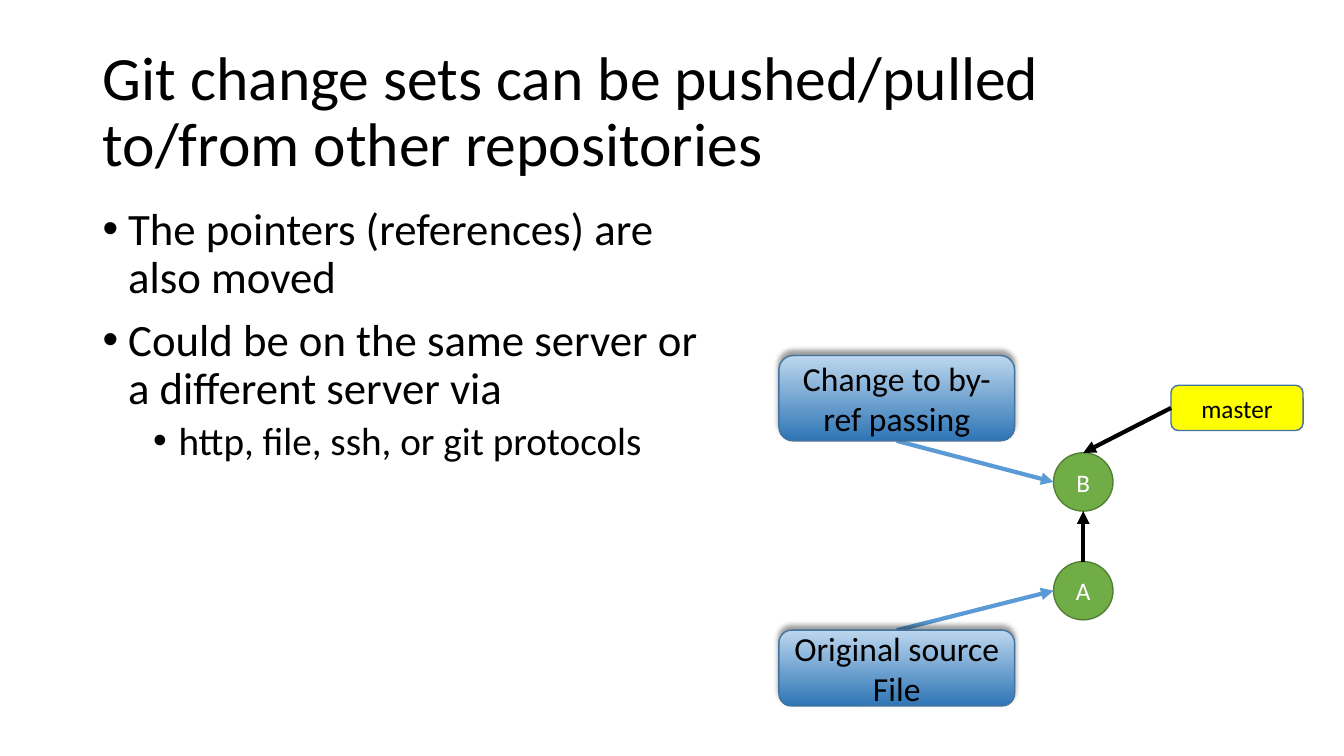
import pptx
import pptx.dml.color
import pptx.enum.shapes
import pptx.enum.text
import pptx.oxml
import pptx.oxml.ns
import pptx.util
from pptx.util import Cm, Pt

SHAPES = pptx.enum.shapes.MSO_SHAPE
ALIGN = pptx.enum.text.PP_ALIGN
ANCHOR = pptx.enum.text.MSO_ANCHOR
NAMESPACE = pptx.oxml.ns.nsdecls("a")
BLACK, WHITE, BLUE = "000000", "FFFFFF", "5B9BD5"
BOX_LINE = "43739E"
NODE_LEFT, NODE_WIDTH, NODE_HEIGHT = 26.55, 1.5, 1.47
NODE_CENTER = NODE_LEFT + NODE_WIDTH / 2
NODE_TOPS = {"A": 14.15, "B": 11.41}
NODE_MIDDLES = {name: top + NODE_HEIGHT / 2 for name, top in NODE_TOPS.items()}
NOTE_LEFT, NOTE_WIDTH = 19.63, 5.94
NOTE_CENTER = NOTE_LEFT + NOTE_WIDTH / 2


def color(value):
    return pptx.dml.color.RGBColor.from_string(value)


def apply_format(target, values):
    for name, value in values.items():
        setattr(target, name, value)


def add_xml(parent, xml):
    parent.append(pptx.oxml.parse_xml(xml))


def write_paragraph(paragraph, text, size, text_color, **values):
    apply_format(paragraph, values)
    run = paragraph.add_run()
    run.text = text
    apply_format(run.font, {"name": "Calibri", "size": Pt(size)})
    run.font.color.rgb = color(text_color)


def add_text_frame(slide, box, anchor):
    frame = slide.shapes.add_textbox(*map(Cm, box)).text_frame
    apply_format(frame, {"word_wrap": True, "vertical_anchor": anchor})
    return frame


def add_title(slide, text):
    frame = add_text_frame(slide, (2.34, 1.02, 29.21, 3.68), ANCHOR.MIDDLE)
    write_paragraph(frame.paragraphs[0], text, 44, BLACK, line_spacing=0.9)


def add_bullets(slide, items):
    frame = add_text_frame(slide, (2.34, 5.08, 15.75, 12.24), ANCHOR.TOP)
    for index, (level, text) in enumerate(items):
        paragraph = frame.add_paragraph() if index else frame.paragraphs[0]
        write_paragraph(paragraph, text, 28 if level else 32, BLACK, level=level,
                        line_spacing=0.9, space_before=Pt(5 if level else 10))
        properties = paragraph._p.get_or_add_pPr()
        properties.set("marL", str(Cm(0.64 + 1.27 * level)))
        properties.set("indent", str(Cm(-0.64)))
        add_xml(properties, f'<a:buFont {NAMESPACE} typeface="Arial"/>')
        add_xml(properties, f'<a:buChar {NAMESPACE} char="•"/>')


def add_box(slide, kind, box, lines, size, text_color, fill, line):
    shape = slide.shapes.add_shape(kind, *map(Cm, box))
    shape.shadow.inherit = False
    if fill:
        shape.fill.solid()
        shape.fill.fore_color.rgb = color(fill)
    shape.line.color.rgb = color(line)
    shape.line.width = Pt(1)
    frame = shape.text_frame
    apply_format(frame, {"word_wrap": True, "vertical_anchor": ANCHOR.MIDDLE})
    for index, text in enumerate(lines):
        paragraph = frame.add_paragraph() if index else frame.paragraphs[0]
        write_paragraph(paragraph, text, size, text_color, alignment=ALIGN.CENTER)
    return shape


def add_node(slide, name):
    box = (NODE_LEFT, NODE_TOPS[name], NODE_WIDTH, NODE_HEIGHT)
    add_box(slide, SHAPES.OVAL, box, [name], 18, WHITE, "70AD47", "538035")


def add_note(slide, top, height, lines):
    box = (NOTE_LEFT, top, NOTE_WIDTH, height)
    shape = add_box(slide, SHAPES.ROUNDED_RECTANGLE, box, lines, 24, BLACK, None, BOX_LINE)
    shape.fill.gradient()
    shape.fill.gradient_angle = 270
    for stop, position, value in zip(shape.fill.gradient_stops, (0, 1), ("BDD7EE", "2E75B6")):
        stop.position = position
        stop.color.rgb = color(value)
    effects = shape._element.spPr.find(pptx.oxml.ns.qn("a:effectLst"))
    add_xml(effects, f'<a:outerShdw {NAMESPACE} blurRad="{Pt(4)}" dist="{Pt(3)}" dir="16200000" '
                     f'rotWithShape="0"><a:srgbClr val="{BLACK}"><a:alpha val="40000"/>'
                     '</a:srgbClr></a:outerShdw>')


def add_arrow(slide, start, end, line_color):
    connector = slide.shapes.add_connector(
        pptx.enum.shapes.MSO_CONNECTOR.STRAIGHT, *map(Cm, start + end))
    connector.line.color.rgb = color(line_color)
    connector.line.width = Pt(3)
    add_xml(connector.line._get_or_add_ln(), f'<a:tailEnd {NAMESPACE} type="triangle"/>')
    add_xml(connector._element.spPr, f"<a:effectLst {NAMESPACE}/>")


def main():
    presentation = pptx.Presentation()
    apply_format(presentation, {"slide_width": Cm(33.87), "slide_height": Cm(19.05)})
    slide = presentation.slides.add_slide(presentation.slide_layouts[6])
    add_title(slide, "Git change sets can be pushed/pulled to/from other repositories")
    add_bullets(slide, [
        (0, "The pointers (references) are also moved"),
        (0, "Could be on the same server or a different server via"),
        (1, "http, file, ssh, or git protocols"),
    ])
    for name in NODE_TOPS:
        add_node(slide, name)
    add_arrow(slide, (NOTE_CENTER, 15.88), (NODE_LEFT, NODE_MIDDLES["A"]), BLUE)
    add_note(slide, 15.88, 1.91, ["Original source", "File"])
    add_arrow(slide, (NOTE_CENTER, 11.11), (NODE_LEFT, NODE_MIDDLES["B"]), BLUE)
    add_note(slide, 8.96, 2.15, ["Change to by-ref passing"])
    add_arrow(slide, (NODE_CENTER, NODE_TOPS["A"]),
              (NODE_CENTER, NODE_TOPS["B"] + NODE_HEIGHT), BLACK)
    add_box(slide, SHAPES.ROUNDED_RECTANGLE, (29.51, 9.71, 3.33, 1.14),
            ["master"], 18, BLACK, "FFFF00", BOX_LINE)
    add_arrow(slide, (29.51, 10.28), (NODE_CENTER, NODE_TOPS["B"]), BLACK)
    presentation.save("out.pptx")


if __name__ == "__main__":
    main()
